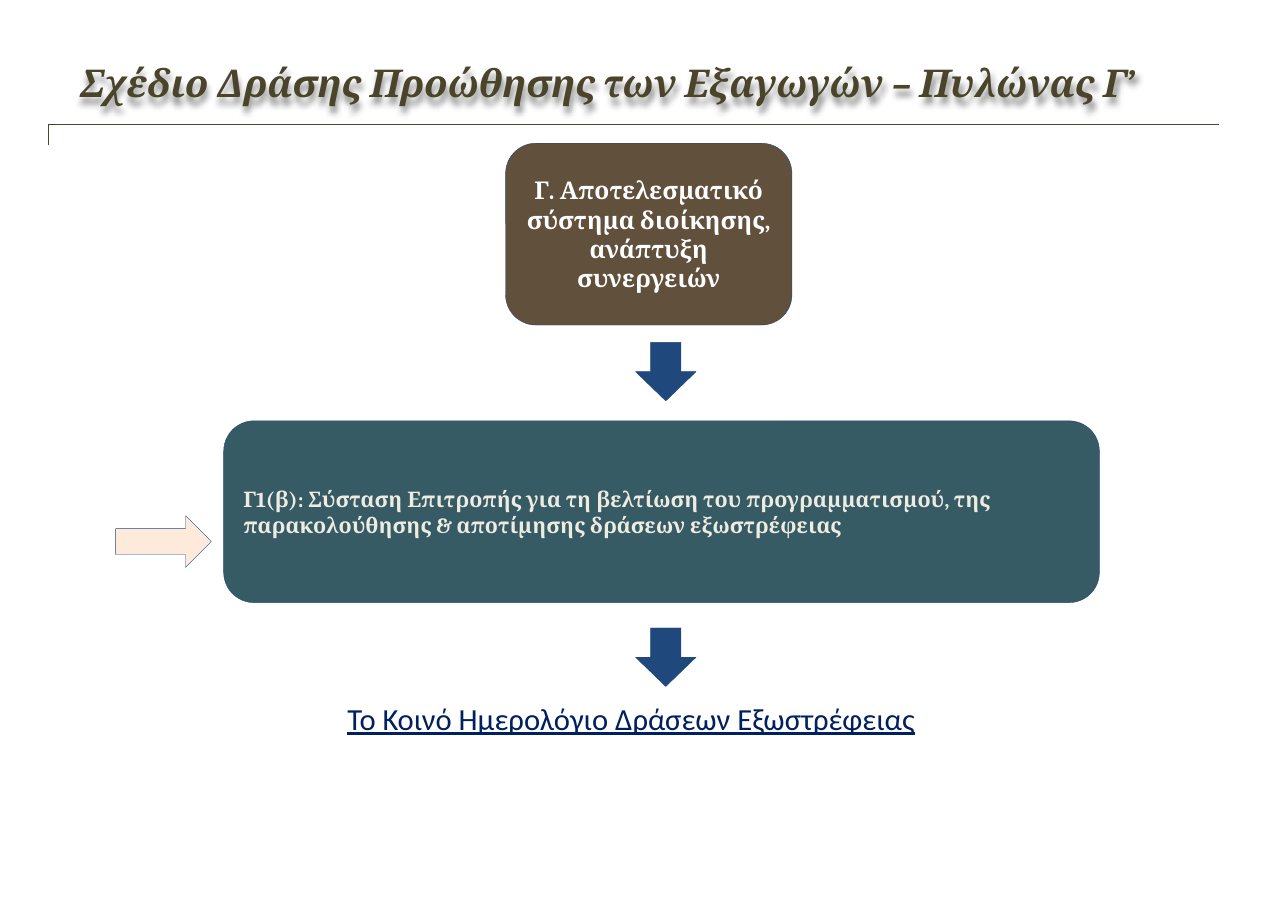
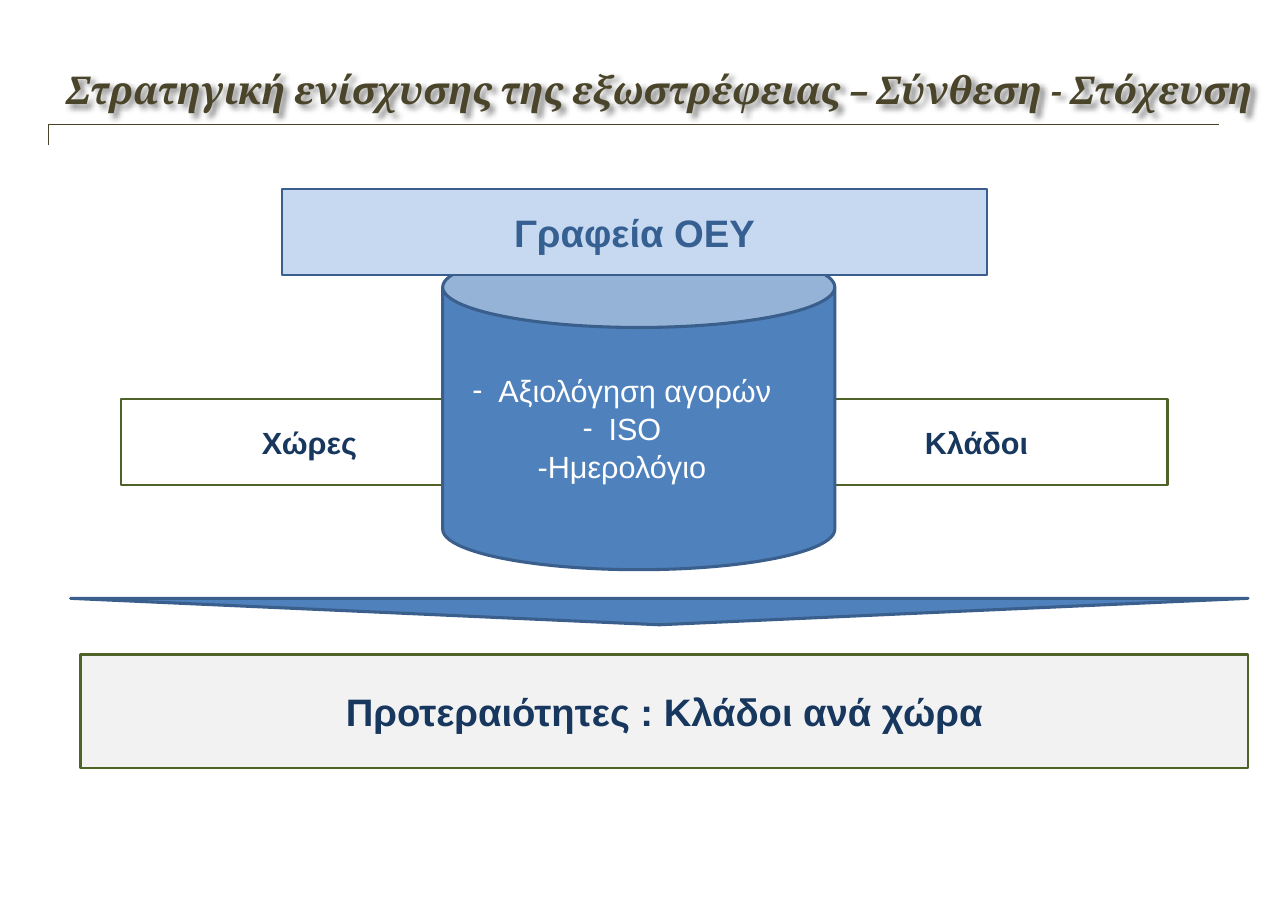
from lxml import etree
from pptx import Presentation
from pptx.dml.color import RGBColor
from pptx.enum.shapes import MSO_CONNECTOR, MSO_SHAPE
from pptx.enum.text import MSO_ANCHOR, MSO_AUTO_SIZE, PP_ALIGN
from pptx.oxml import parse_xml
from pptx.oxml.ns import nsdecls, qn
from pptx.util import Pt

C = {
    "olive": "4A452A", "link": "002060", "navy": "1F497D", "brown": "60503C",
    "teal": "375B65", "cream": "EEECE1", "peach": "FDEADA", "white": "FFFFFF",
    "green": "4F6228", "ink": "17375E", "grey": "F2F2F2", "blue": "4F81BD",
    "edge": "3A5F8C", "sky": "C6D9F1", "steel": "376092",
}


def add_text(p, text, font, size, color, bold=False, italic=False):
    r = p.add_run()
    r.text = text
    r.font.name, r.font.size = font, Pt(size)
    r.font.bold, r.font.italic = bold, italic
    r.font.color.rgb = RGBColor.from_string(C[color])
    return r


def add_box(s, kind, x, y, w, h, fill, line, weight, inset=(7.2, 3.6)):
    sp = s.shapes.add_shape(kind, Pt(x), Pt(y), Pt(w), Pt(h))
    sp.shadow.inherit = False
    sp.fill.solid()
    sp.fill.fore_color.rgb = RGBColor.from_string(C[fill])
    sp.line.color.rgb = RGBColor.from_string(C[line])
    sp.line.width = Pt(weight)
    tf = sp.text_frame
    tf.word_wrap = True
    tf.vertical_anchor = MSO_ANCHOR.MIDDLE
    tf.margin_left = tf.margin_right = Pt(inset[0])
    tf.margin_top = tf.margin_bottom = Pt(inset[1])
    tf.paragraphs[0].alignment = PP_ALIGN.CENTER
    return sp


prs = Presentation()
prs.slide_width, prs.slide_height = Pt(841.9), Pt(595.3)
layout = prs.slide_layouts[5]

# Slides and titles: text, left, top, width, height, shadow angle
titles = [
    ("Σχέδιο Δράσης Προώθησης των Εξαγωγών – Πυλώνας Γ’", 44.6, 34.6, 752.4, 38.9, 90),
    ("Στρατηγική ενίσχυσης της εξωστρέφειας – Σύνθεση - Στόχευση", 35.3, 38.9, 802.1, 73.4, 45),
]
for text, x, y, w, h, angle in titles:
    s = prs.slides.add_slide(layout)
    sp = s.shapes.title
    sp.left, sp.top, sp.width, sp.height = Pt(x), Pt(y), Pt(w), Pt(h)
    sp.fill.background()
    sp._element.spPr.append(parse_xml(
        f'<a:effectLst {nsdecls("a")}><a:outerShdw blurRad="50800" dist="38100" '
        f'dir="{angle * 60000}" algn="tl" rotWithShape="0"><a:srgbClr val="000000">'
        '<a:alpha val="43000"/></a:srgbClr></a:outerShdw></a:effectLst>'))
    tf = sp.text_frame
    tf.word_wrap, tf.auto_size = True, MSO_AUTO_SIZE.NONE
    tf.vertical_anchor = MSO_ANCHOR.TOP
    tf.margin_left = tf.margin_right = Pt(7.9)
    tf.margin_top = tf.margin_bottom = Pt(4.3)
    p = tf.paragraphs[0]
    p.alignment = PP_ALIGN.LEFT
    add_text(p, text, "Cambria", 25, "olive", bold=True, italic=True)

plan, strategy = prs.slides

# Title rule, drawn once and moved to the shared layout
rule = plan.shapes.add_connector(MSO_CONNECTOR.ELBOW, Pt(31.7), Pt(95), Pt(797), Pt(81.5))
rule.line.color.rgb = RGBColor.from_string(C["olive"])
rule.line.width = Pt(1)
el = rule._element
etree.SubElement(el.spPr, qn("a:effectLst"))
etree.SubElement(el.spPr.find(qn("a:prstGeom")).find(qn("a:avLst")),
                 qn("a:gd"), name="adj1", fmla="val 0")
el.nvCxnSpPr.cNvPr.set("id", "100")
layout.shapes._spTree.append(el)

# Plan: pillar and action
s = plan
sp = add_box(s, MSO_SHAPE.ROUNDED_RECTANGLE, 330.5, 93.6, 187.2, 118.8, "brown", "navy", 0.25)
add_text(sp.text_frame.paragraphs[0],
         "Γ. Αποτελεσματικό σύστημα διοίκησης, ανάπτυξη συνεργειών",
         "Cambria", 16, "white", bold=True)

sp = add_box(s, MSO_SHAPE.ROUNDED_RECTANGLE, 146.2, 275, 572.4, 118.8, "teal", "navy", 0.25)
p = sp.text_frame.paragraphs[0]
p.alignment, p.space_after = PP_ALIGN.LEFT, Pt(6)
add_text(p, "Γ1(β): Σύσταση Επιτροπής για τη βελτίωση του προγραμματισμού, της "
         "παρακολούθησης & αποτίμησης δράσεων εξωστρέφειας",
         "Cambria", 14, "cream", bold=True)

# Plan: arrows
add_box(s, MSO_SHAPE.RIGHT_ARROW, 75.6, 337, 62.6, 33.8, "peach", "navy", 0.25)
for y in (223.8, 410.4):
    add_box(s, MSO_SHAPE.DOWN_ARROW, 415.4, y, 39.6, 38.2, "navy", "navy", 0.25)

# Plan: result
tf = s.shapes.add_textbox(Pt(143.3), Pt(453.6), Pt(538.6), Pt(31.7)).text_frame
tf.word_wrap = True
p = tf.paragraphs[0]
p.alignment = PP_ALIGN.CENTER
r = add_text(p, "Το Κοινό Ημερολόγιο Δράσεων Εξωστρέφειας", "Calibri", 20, "link")
r.font.underline = True

# Strategy: labelled bars, with the cylinder between the lower and the upper ones
s = strategy
bars = [
    ("Κλάδοι", 513.4, 260.6, 249.8, 56.2, "white", "green", 1.5, 20, "ink"),
    ("Χώρες", 79.2, 260.6, 246.2, 56.2, "white", "green", 1.5, 20, "ink"),
    ("Προτεραιότητες : Κλάδοι ανά χώρα", 52.6, 427.7, 763.2, 74.2, "grey", "green", 1.5, 25, "ink"),
    ("Γραφεία ΟΕΥ", 184.3, 123.8, 460.8, 56.2, "sky", "edge", 1.25, 25, "steel"),
]
for text, x, y, w, h, fill, line, weight, size, color in bars:
    if text == "Γραφεία ΟΕΥ":
        can = add_box(s, MSO_SHAPE.CAN, 289.4, 161.3, 256.3, 211, "blue", "edge", 2, (7.9, 4.3))
    sp = add_box(s, MSO_SHAPE.RECTANGLE, x, y, w, h, fill, line, weight, (7.9, 4.3))
    add_text(sp.text_frame.paragraphs[0], text, "Arial", size, color, bold=True)

# Strategy: cylinder text
tf = can.text_frame
for i, (text, dash) in enumerate([("Αξιολόγηση αγορών", True), ("ISO", True), ("-Ημερολόγιο", False)]):
    p = tf.paragraphs[0] if i == 0 else tf.add_paragraph()
    p.alignment, p.space_before = PP_ALIGN.CENTER, Pt(1)
    add_text(p, text, "Arial", 20, "white")
    if dash:
        pPr = p._p.get_or_add_pPr()
        for name, value in (("marL", 17), ("marR", 22), ("indent", -17)):
            pPr.set(name, str(Pt(value)))
        etree.SubElement(pPr, qn("a:buFont"), typeface="Arial")
        etree.SubElement(pPr, qn("a:buChar"), char="-")

# Strategy: wedge pointing to the priorities
add_box(s, MSO_SHAPE.FLOWCHART_MERGE, 46.1, 391, 769.7, 17.3, "blue", "edge", 2)

prs.save("out.pptx")
